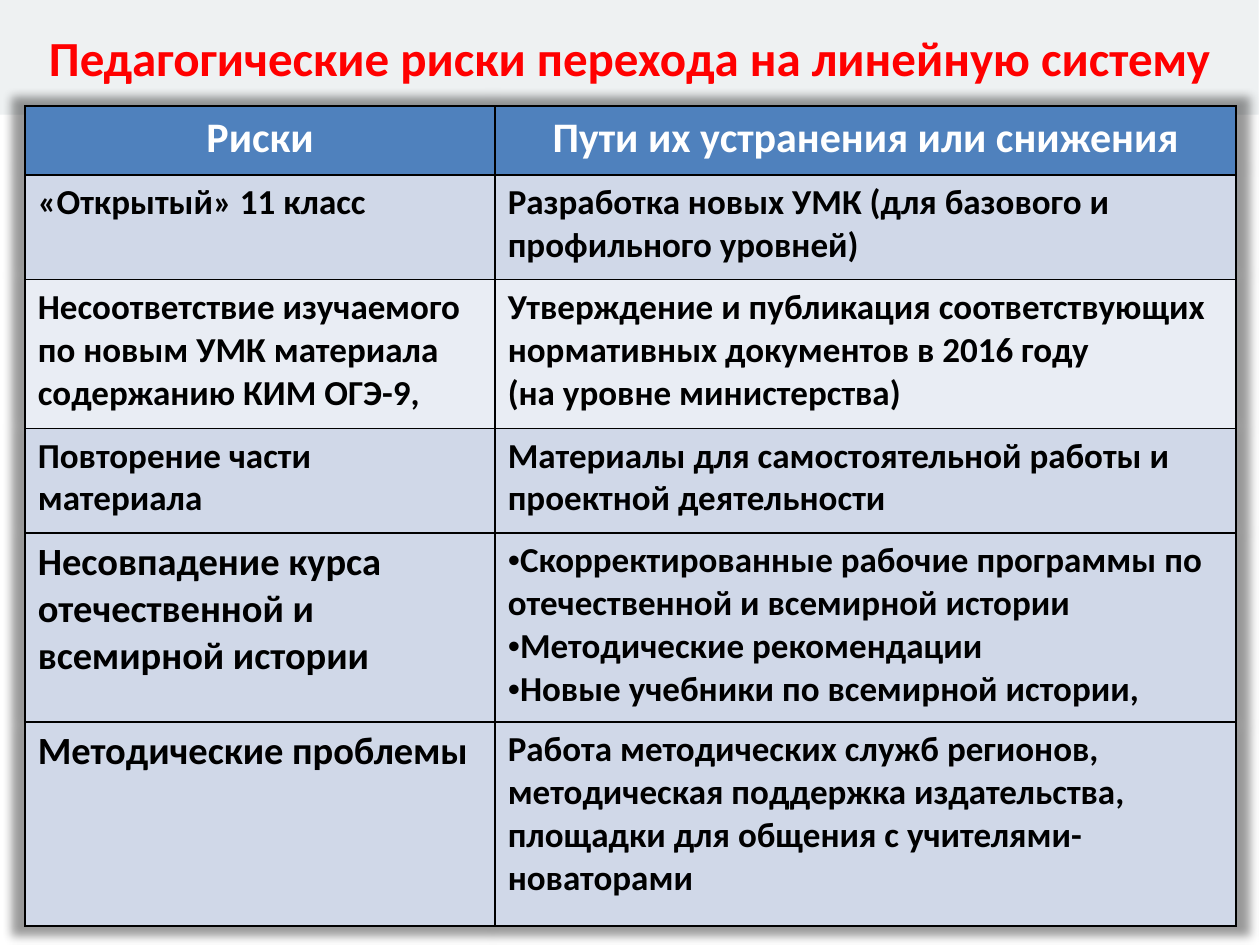
from lxml import etree
from pptx import Presentation
from pptx.dml.color import RGBColor
from pptx.enum import shapes, text
from pptx.oxml import parse_xml
from pptx.oxml.ns import qn
from pptx.util import Inches, Pt

# Content: each row is (risk, ways to reduce it, risk text size, fill)
TITLE = "Педагогические риски перехода на линейную систему"
HEADERS = ["Риски", "Пути их устранения или снижения"]
BLUE, DARK_BAND, LIGHT_BAND = "4F81BD", "D0D8E8", "E9EDF4"
ROWS = [
    ("«Открытый» 11 класс",
     ["Разработка новых УМК (для базового и профильного уровней)"], 20, DARK_BAND),
    ("Несоответствие изучаемого по новым УМК материала содержанию КИМ ОГЭ-9,",
     ["Утверждение и публикация соответствующих нормативных документов в 2016 году",
      "(на уровне министерства)"], 20, LIGHT_BAND),
    ("Повторение части материала",
     ["Материалы для самостоятельной работы и проектной деятельности"], 20, DARK_BAND),
    ("Несовпадение курса отечественной и всемирной истории",
     ["•Скорректированные рабочие программы по отечественной и всемирной истории",
      "•Методические рекомендации",
      "•Новые учебники по всемирной истории,"], 22, DARK_BAND),
    ("Методические проблемы",
     ["Работа методических служб регионов, методическая поддержка издательства, "
      "площадки для общения с учителями-новаторами"], 22, DARK_BAND),
]
COLUMN_WIDTHS = [3.73, 5.88]
ROW_HEIGHTS = [0.55, 0.83, 1.18, 0.83, 1.5, 1.62]
SHADOW = """<a:effectLst xmlns:a="http://schemas.openxmlformats.org/drawingml/2006/main">
<a:outerShdw blurRad="63500" sx="102000" sy="102000" algn="ctr" rotWithShape="0">
<a:prstClr val="black"><a:alpha val="40000"/></a:prstClr></a:outerShdw></a:effectLst>"""


def color(value):
    return RGBColor.from_string(value)


def paint(target, value):
    target.fill.solid()
    target.fill.fore_color.rgb = color(value)


def write(frame, lines, size, ink="000000", align=text.PP_ALIGN.LEFT):
    """Fill a text frame; a leading • turns a line into a bulleted paragraph."""
    frame.word_wrap = True
    for index, line in enumerate(lines):
        paragraph = frame.paragraphs[0] if index == 0 else frame.add_paragraph()
        paragraph.alignment = align
        run = paragraph.add_run()
        run.text = line.removeprefix("•")
        font = run.font
        font.name, font.size, font.bold = "Calibri", Pt(size), True
        font.color.rgb = color(ink)
        if line.startswith("•"):
            properties = paragraph._p.get_or_add_pPr()
            properties.set("marL", "0")
            properties.set("indent", "0")
            etree.SubElement(properties, qn("a:buFont")).set("typeface", "Arial")
            etree.SubElement(properties, qn("a:buChar")).set("char", "•")


def add_borders(cell):
    properties = cell._tc.get_or_add_tcPr()
    for index, side in enumerate(("a:lnL", "a:lnR", "a:lnT", "a:lnB")):
        line = etree.Element(qn(side), w=str(Pt(1)))
        fill = etree.SubElement(line, qn("a:solidFill"))
        etree.SubElement(fill, qn("a:srgbClr")).set("val", "000000")
        properties.insert(index, line)


presentation = Presentation()
presentation.slide_width, presentation.slide_height = Inches(10), Inches(7.5)
slide = presentation.slides.add_slide(presentation.slide_layouts[6])

# Title band
band = slide.shapes.add_shape(shapes.MSO_SHAPE.RECTANGLE, 0, 0, Inches(9.99), Inches(0.91))
band.shadow.inherit = False
band.line.fill.background()
paint(band, "EEF1F2")
frame = band.text_frame
frame.margin_left = frame.margin_right = Inches(0.09)
frame.margin_top = frame.margin_bottom = Inches(0.04)
frame.vertical_anchor = text.MSO_ANCHOR.MIDDLE
write(frame, [TITLE], 28, ink="FF0000", align=text.PP_ALIGN.CENTER)

# Table grid with a soft shadow
table = slide.shapes.add_table(
    len(ROW_HEIGHTS), len(COLUMN_WIDTHS), Inches(0.2), Inches(0.84),
    Inches(sum(COLUMN_WIDTHS)), Inches(sum(ROW_HEIGHTS))).table
table._tbl.tblPr.insert(0, parse_xml(SHADOW))
for column, width in zip(table.columns, COLUMN_WIDTHS):
    column.width = Inches(width)
for row, height in zip(table.rows, ROW_HEIGHTS):
    row.height = Inches(height)

# Header and body text
for index, header in enumerate(HEADERS):
    cell = table.cell(0, index)
    paint(cell, BLUE)
    write(cell.text_frame, [header], 24, ink="FFFFFF", align=text.PP_ALIGN.CENTER)
for index, (risk, remedies, risk_size, fill) in enumerate(ROWS, start=1):
    for column, (lines, size) in enumerate([([risk], risk_size), (remedies, 20)]):
        cell = table.cell(index, column)
        paint(cell, fill)
        write(cell.text_frame, lines, size)
for cell in table.iter_cells():
    add_borders(cell)

presentation.save("out.pptx")
